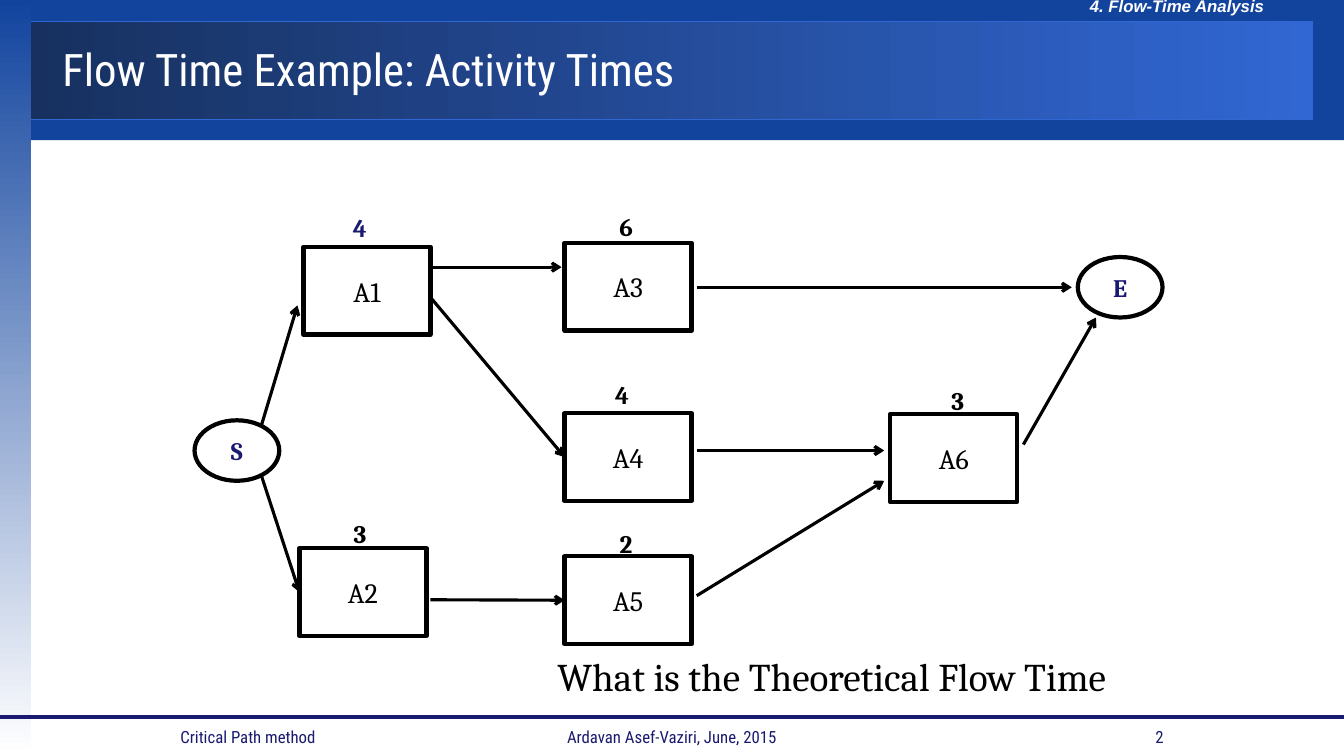
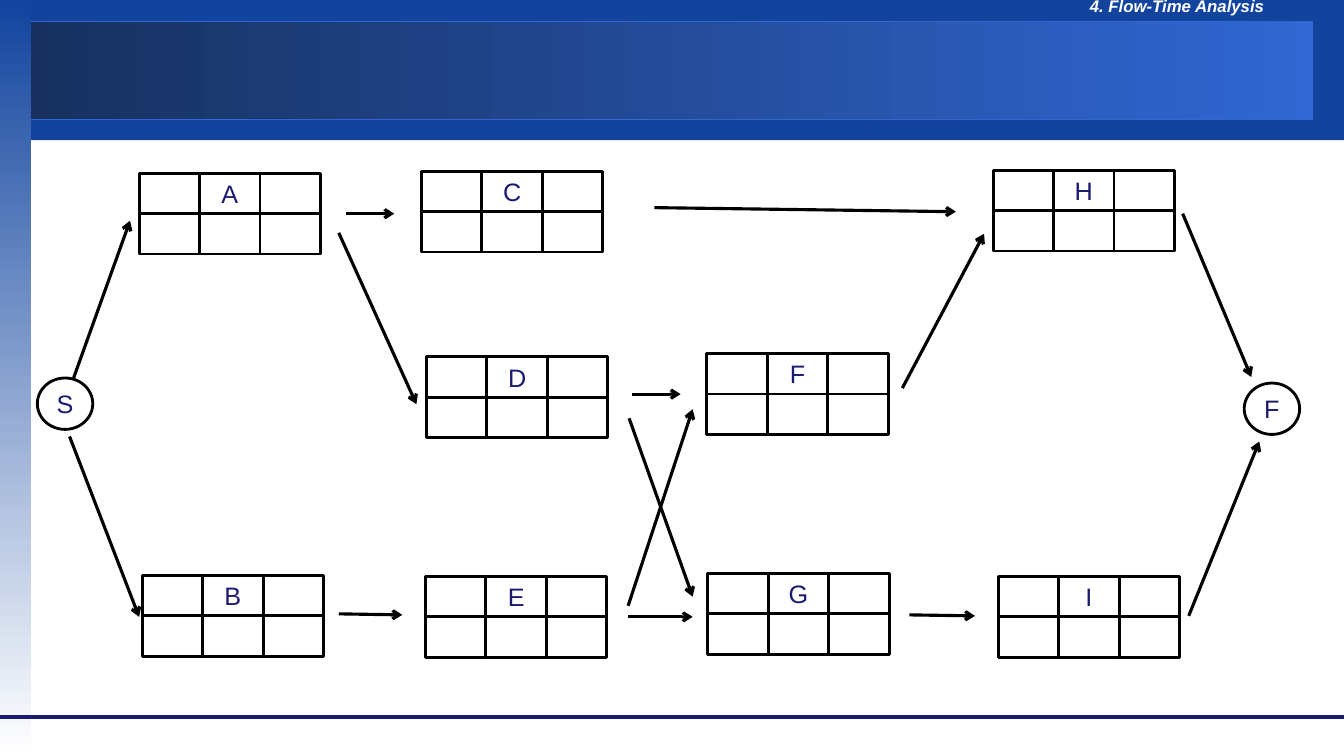
"""Build two activity-network slides with a shared banner and footer rule."""
from pptx import Presentation
from pptx.dml.color import RGBColor
from pptx.enum.shapes import MSO_CONNECTOR, MSO_SHAPE
from pptx.enum.text import MSO_ANCHOR, PP_ALIGN
from pptx.oxml.ns import qn
from pptx.util import Inches, Pt
from lxml import etree

RECTANGLE, OVAL = MSO_SHAPE.RECTANGLE, MSO_SHAPE.OVAL
STRAIGHT = MSO_CONNECTOR.STRAIGHT
TOP, MIDDLE = MSO_ANCHOR.TOP, MSO_ANCHOR.MIDDLE
LEFT, CENTER, RIGHT = PP_ALIGN.LEFT, PP_ALIGN.CENTER, PP_ALIGN.RIGHT
LEFT_SIDE = 1

NAVY, BLACK, WHITE = "1A1A70", "000000", "FFFFFF"
BLUE, BRIGHT_BLUE, DEEP_BLUE = "12449E", "3167D3", "17305F"
CAMBRIA, ARIAL, ROBOTO = "Cambria", "Arial", "Roboto Condensed"

CHAPTER = "4. Flow-Time Analysis"
TITLE = "Flow Time Example: Activity Times"
QUESTION = "What is the Theoretical Flow Time"
FOOTERS = [
    ("Critical Path method", 1.69, 2.33, LEFT),
    ("Ardavan Asef-Vaziri, June, 2015", 5.08, 3.17, CENTER),
    ("2", 9.31, 2.33, RIGHT),
]

ACTIVITY_SIZE = (1.26, 0.87)
ACTIVITIES = {
    "A1": (3.01, 2.45), "A2": (2.97, 5.44), "A3": (5.6, 2.41),
    "A4": (5.6, 4.1), "A5": (5.6, 5.52), "A6": (8.83, 4.11),
}
DURATIONS = [
    ("4", 3.4, 2.06, NAVY), ("3", 3.4, 5.09, BLACK), ("6", 6.04, 2.05, BLACK),
    ("4", 6, 3.71, BLACK), ("2", 6.04, 5.19, BLACK), ("3", 9.33, 3.77, BLACK),
]
TERMINAL_SIZE = (0.84, 0.6)
TERMINALS = {"S": (1.93, 4.17), "E": (10.69, 2.55)}
ACTIVITY_ARROWS = [
    (2.59, 4.23, 2.95, 3.03, None), (2.59, 4.71, 2.97, 5.88, "A2"),
    (4.27, 2.65, 5.57, 2.65, None), (4.27, 2.95, 5.6, 4.54, "A4"),
    (4.27, 5.95, 5.6, 5.95, "A5"), (6.91, 4.47, 8.77, 4.47, None),
    (6.91, 5.91, 8.77, 4.77, None), (6.91, 2.85, 10.63, 2.85, None),
    (10.15, 4.41, 10.87, 3.15, None),
]

CELL_WIDTH, CELL_HEIGHT = 0.6, 0.4
GRID_ROWS, GRID_COLUMNS = 2, 3
LABEL_CELL = (0, 1)
GRIDS = {
    "A": (1.38, 1.72), "B": (1.41, 5.71), "C": (4.18, 1.7),
    "D": (4.23, 3.54), "E": (4.22, 5.72), "F": (7.01, 3.51),
    "G": (7.02, 5.69), "H": (9.85, 1.69), "I": (9.9, 5.72),
}
ENDPOINT_SIZE = (0.55, 0.51)
ENDPOINTS = {"S": (0.37, 3.75), "F": (12.34, 3.8)}
GRID_ARROWS = [
    (0.73, 3.75, 1.29, 2.19), (0.69, 4.33, 1.38, 6.12),
    (3.43, 2.12, 3.91, 2.12), (3.36, 2.31, 4.13, 4.01),
    (3.36, 6.09, 3.99, 6.1), (6.27, 3.91, 6.75, 3.91),
    (6.23, 6.12, 6.87, 6.12), (6.24, 4.15, 6.87, 5.92),
    (6.23, 6.01, 6.87, 4.06), (6.49, 2.06, 9.48, 2.1),
    (8.95, 3.85, 9.76, 2.32), (9.02, 6.1, 9.67, 6.11),
    (11.73, 2.12, 12.41, 3.74), (11.79, 6.11, 12.49, 4.38),
]


def rgb(code):
    return RGBColor.from_string(code)


def write(shape, text, font, size, color, align=LEFT, anchor=TOP,
          bold=False, italic=False, wrap=True):
    frame = shape.text_frame
    frame.word_wrap = wrap
    frame.vertical_anchor = anchor
    para = frame.paragraphs[0]
    para.text = text
    para.alignment = align
    for span in para.runs:
        span.font.name = font
        span.font.size = Pt(size)
        span.font.bold = bold
        span.font.italic = italic
        span.font.color.rgb = rgb(color)


def add_text(page, place, text, font, size, color, **style):
    box = page.shapes.add_textbox(*map(Inches, place))
    write(box, text, font, size, color, **style)


def add_block(shapes, kind, place, fill=None, line=None, weight=1.0):
    block = shapes.add_shape(kind, *map(Inches, place))
    block.shadow.inherit = False
    if fill:
        block.fill.solid()
        block.fill.fore_color.rgb = rgb(fill)
    else:
        block.fill.background()
    if line:
        block.line.color.rgb = rgb(line)
        block.line.width = Pt(weight)
    else:
        block.line.fill.background()
    return block


def add_node(shapes, kind, place, weight, text="", font=ARIAL, size=18,
             color=NAVY, bold=False):
    node = add_block(shapes, kind, place, line=BLACK, weight=weight)
    frame = node.text_frame
    frame.margin_left = frame.margin_right = 0
    frame.margin_top = frame.margin_bottom = 0
    write(node, text, font, size, color, CENTER, MIDDLE, bold, wrap=False)
    return node


def shade(block, start, end, angle):
    block.fill.gradient()
    block.fill.gradient_angle = angle
    for stop, color in zip(block.fill.gradient_stops, (start, end)):
        stop.color.rgb = rgb(color)


def add_line(page, ends, color=BLACK, weight=2.25, arrow=True):
    line = page.shapes.add_connector(STRAIGHT, *map(Inches, ends))
    line.line.color.rgb = rgb(color)
    line.line.width = Pt(weight)
    properties = line.element.spPr
    if arrow:
        outline = properties.find(qn("a:ln"))
        etree.SubElement(outline, qn("a:tailEnd"), type="arrow")
    etree.SubElement(properties, qn("a:effectLst"))
    return line


def add_page(deck):
    page = deck.slides.add_slide(deck.slide_layouts[6])
    add_block(page.shapes, RECTANGLE, (0.26, 0, 13.07, 1.39), BLUE)
    banner = add_block(page.shapes, RECTANGLE, (0.26, 0.21, 12.76, 0.98),
                       line=BRIGHT_BLUE, weight=0.75)
    shade(banner, DEEP_BLUE, BRIGHT_BLUE, 0)
    side_band = add_block(page.shapes, RECTANGLE, (0, 0, 0.31, 7.5))
    shade(side_band, BLUE, WHITE, 270)
    add_text(page, (10.71, -0.09, 2.78, 0.3), CHAPTER, ARIAL, 12, WHITE,
             bold=True, italic=True)
    add_line(page, (0, 7.11, 13.33, 7.11), NAVY, 3, arrow=False)
    return page


def build_activity_times(deck):
    page = add_page(deck)
    add_text(page, (0.52, 0.21, 12.39, 0.94), TITLE, ROBOTO, 32, WHITE,
             anchor=MIDDLE)
    nodes = {
        name: add_node(page.shapes, RECTANGLE, corner + ACTIVITY_SIZE, 3,
                       name, CAMBRIA, 20, BLACK)
        for name, corner in ACTIVITIES.items()
    }
    for name, corner in TERMINALS.items():
        add_node(page.shapes, OVAL, corner + TERMINAL_SIZE, 3, name, CAMBRIA,
                 bold=True)
    for text, left, top, color in DURATIONS:
        add_text(page, (left, top, 0.34, 0.4), text, CAMBRIA, 18, color,
                 align=CENTER, bold=True, wrap=False)
    for *ends, target in ACTIVITY_ARROWS:
        arrow = add_line(page, ends)
        if target:
            arrow.end_connect(nodes[target], LEFT_SIDE)
    add_text(page, (5.43, 6.42, 6.26, 0.57), QUESTION, CAMBRIA, 28, BLACK)
    for text, left, width, align in FOOTERS:
        add_text(page, (left, 7.11, width, 0.4), text, ROBOTO, 12, NAVY,
                 align=align, anchor=MIDDLE)


def add_grid(page, name, left, top):
    group = page.shapes.add_group_shape()
    for row in range(GRID_ROWS):
        for column in range(GRID_COLUMNS):
            place = (left + column * CELL_WIDTH, top + row * CELL_HEIGHT,
                     CELL_WIDTH, CELL_HEIGHT)
            text = name if (row, column) == LABEL_CELL else ""
            add_node(group.shapes, RECTANGLE, place, 2, text)


def build_network(deck):
    page = add_page(deck)
    for name, corner in GRIDS.items():
        add_grid(page, name, *corner)
    for name, corner in ENDPOINTS.items():
        add_node(page.shapes, OVAL, corner + ENDPOINT_SIZE, 2, name)
    for ends in GRID_ARROWS:
        add_line(page, ends)


def main():
    deck = Presentation()
    deck.slide_width, deck.slide_height = Inches(13.33), Inches(7.5)
    build_activity_times(deck)
    build_network(deck)
    deck.save("out.pptx")


if __name__ == "__main__":
    main()
